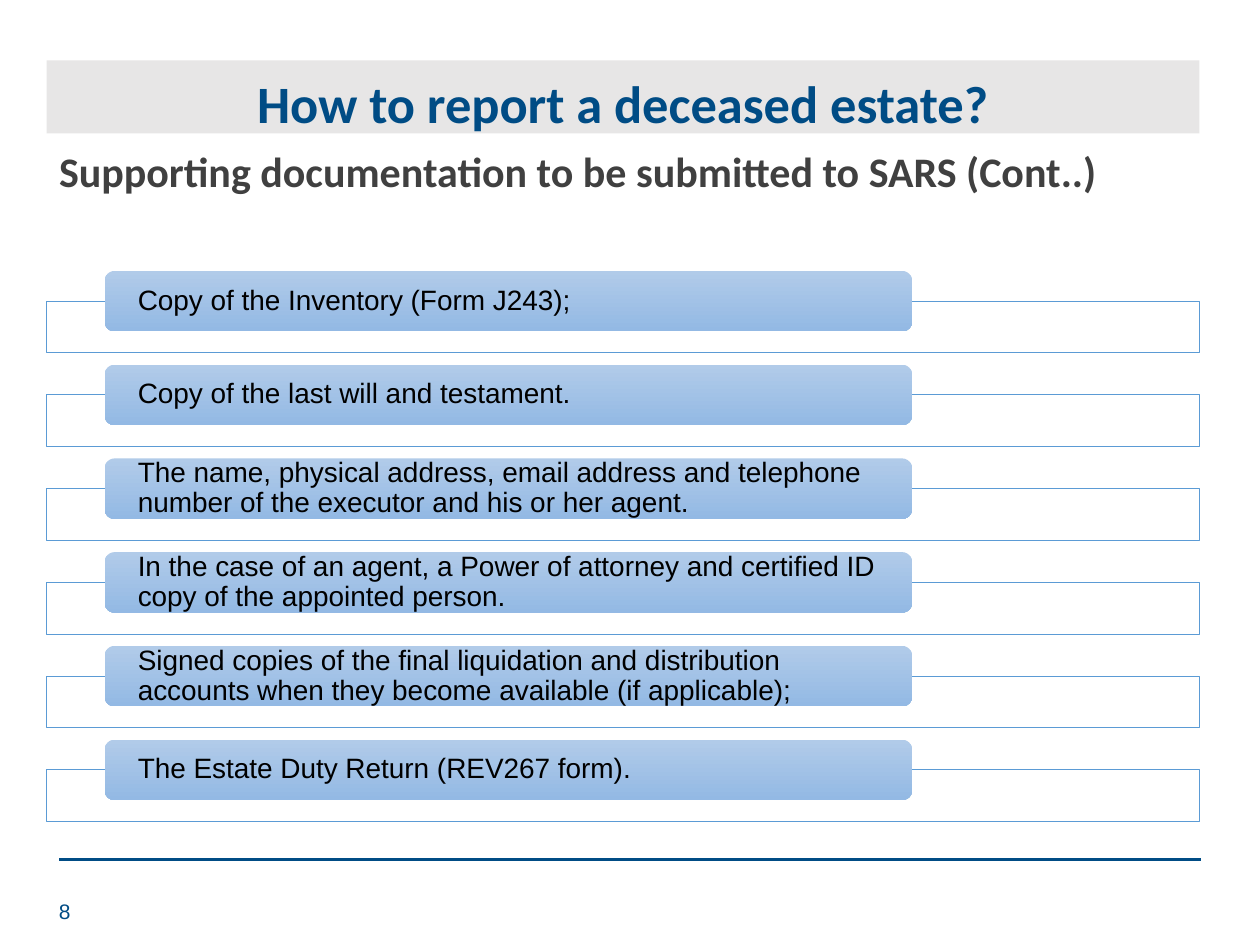
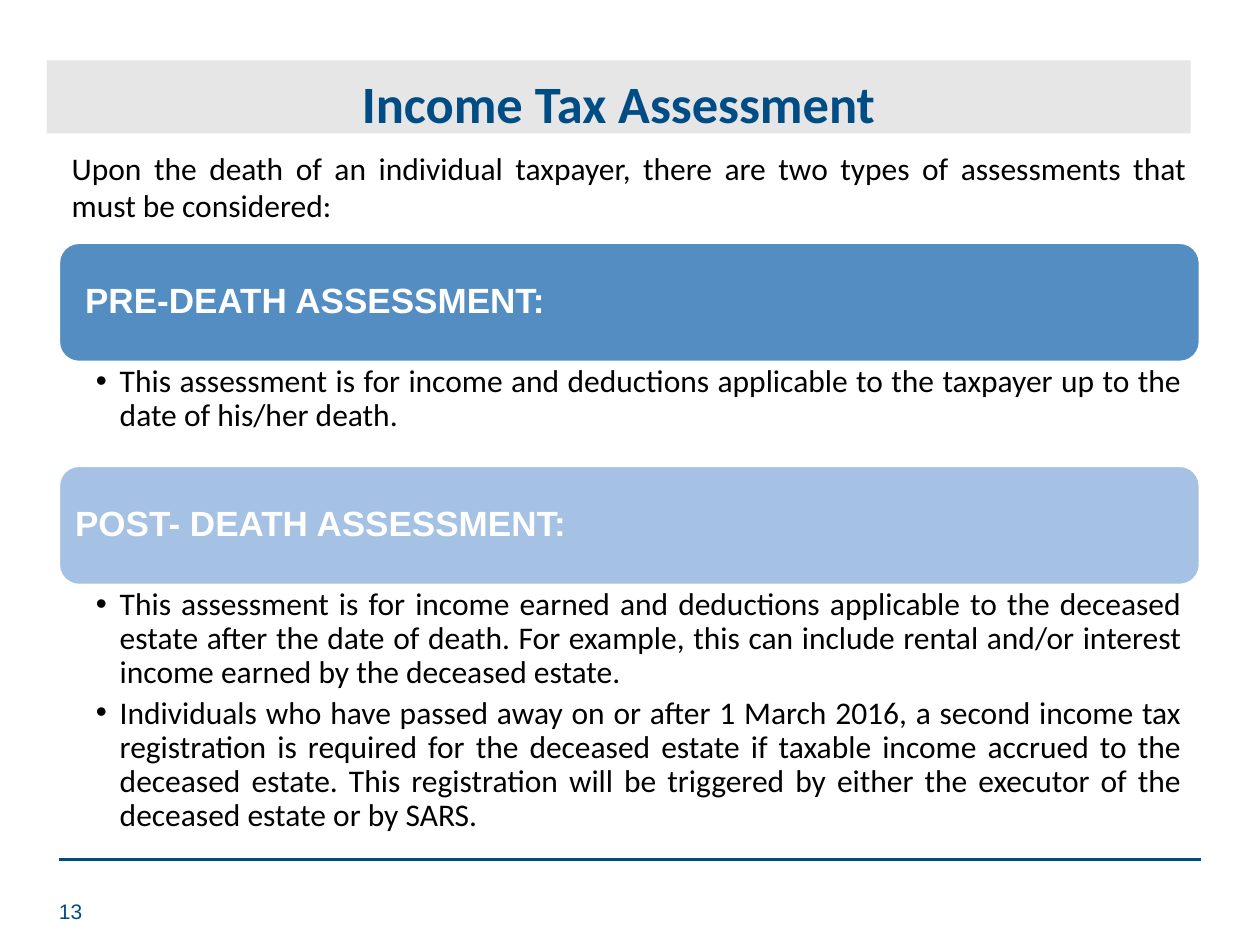
"""Builds two slides on reporting and assessing a deceased estate."""
from lxml import etree
from pptx import Presentation
from pptx.dml.color import RGBColor
from pptx.enum.shapes import MSO_CONNECTOR, MSO_SHAPE
from pptx.enum.text import MSO_ANCHOR, PP_ALIGN
from pptx.oxml.ns import qn
from pptx.util import Inches, Pt

RECTANGLE, ROUNDED = MSO_SHAPE.RECTANGLE, MSO_SHAPE.ROUNDED_RECTANGLE
STRAIGHT = MSO_CONNECTOR.STRAIGHT
TOP, MIDDLE = MSO_ANCHOR.TOP, MSO_ANCHOR.MIDDLE
LEFT, CENTER, JUSTIFY = PP_ALIGN.LEFT, PP_ALIGN.CENTER, PP_ALIGN.JUSTIFY

NAVY = RGBColor(0x00, 0x4C, 0x85)
BAND_GREY = RGBColor(0xE7, 0xE6, 0xE6)
DARK_GREY = RGBColor(0x40, 0x40, 0x40)
BLACK = RGBColor(0x00, 0x00, 0x00)
WHITE = RGBColor(0xFF, 0xFF, 0xFF)
FRAME_BLUE = RGBColor(0x5B, 0x9B, 0xD5)
TAB_TOP = RGBColor(0xB1, 0xCB, 0xE9)
TAB_BOTTOM = RGBColor(0x93, 0xB9, 0xE4)
PRE_BLUE = RGBColor(0x53, 0x8D, 0xC1)
POST_BLUE = RGBColor(0xA5, 0xC1, 0xE3)
HEADING_FONT, BODY_FONT = "Calibri", "Arial"

DOCUMENTS_TITLE = "How to report a deceased estate?"
DOCUMENTS_SUBTITLE = "Supporting documentation to be submitted to SARS (Cont..)"
DOCUMENTS = [
    "Copy of the Inventory (Form J243);",
    "Copy of the last will and testament.",
    "The name, physical address, email address and telephone number of the "
    "executor and his or her agent.",
    "In the case of an agent, a Power of attorney and certified ID copy of "
    "the appointed person.",
    "Signed copies of the final liquidation and distribution accounts when "
    "they become available (if applicable);",
    "The Estate Duty Return (REV267 form).",
]
ASSESSMENT_TITLE = "Income Tax Assessment"
ASSESSMENT_INTRO = ("Upon the death of an individual taxpayer, there are two types of "
                    "assessments that must be considered:")
ASSESSMENTS = [
    {"heading": "PRE-DEATH ASSESSMENT:", "color": PRE_BLUE, "indent": 0.16, "height": 0.83,
     "points": [
         "This assessment is for income and deductions applicable to the taxpayer "
         "up to the date of his/her death."]},
    {"heading": "POST- DEATH ASSESSMENT:", "color": POST_BLUE, "indent": 0.08, "height": 2.08,
     "points": [
         "This assessment is for income earned and deductions applicable to the "
         "deceased estate after the date of death. For example, this can include "
         "rental and/or interest income earned by the deceased estate.",
         "Individuals who have passed away on or after 1 March 2016, a second income "
         "tax registration is required for the deceased estate if taxable income "
         "accrued to the deceased estate. This registration will be triggered by "
         "either the executor of the deceased estate or by SARS."]},
]

BAND_LEFT, BAND_WIDTH = 0.37, 9.15
FIRST_TAB, TAB_PITCH, TAB_HEIGHT = 2.15, 0.744, 0.48
PANEL_DROP, PANEL_HEIGHT = 0.24, 0.41
BLOCK_LEFT, BLOCK_WIDTH = 0.47, 9.05
FIRST_HEADING, HEADING_HEIGHT = 1.93, 0.94


def add_bullet(para):
    """Gives a paragraph a hanging round bullet."""
    properties = para._p.get_or_add_pPr()
    properties.set("marL", str(Inches(0.19)))
    properties.set("indent", str(-Inches(0.19)))
    etree.SubElement(properties, qn("a:buFont"), typeface="Arial")
    etree.SubElement(properties, qn("a:buChar"), char="•")


def write(box, *texts, size, color=BLACK, font=BODY_FONT, bold=False, align=LEFT,
          anchor=TOP, insets=(0.1, 0.05, 0.1, 0.05), spacing=None, after=0, bullet=False):
    """Writes one paragraph per text into a box."""
    frame = box.text_frame
    frame.word_wrap = True
    frame.vertical_anchor = anchor
    (frame.margin_left, frame.margin_top,
     frame.margin_right, frame.margin_bottom) = map(Inches, insets)
    for index, text in enumerate(texts):
        para = frame.add_paragraph() if index else frame.paragraphs[0]
        para.alignment = align
        para.space_after = Pt(after)
        if spacing:
            para.line_spacing = spacing
        if bullet:
            add_bullet(para)
        span = para.add_run()
        span.text = text
        span.font.size = Pt(size)
        span.font.name = font
        span.font.bold = bold
        span.font.color.rgb = color


def add_text(page, area, *texts, **style):
    """Adds a text box."""
    write(page.shapes.add_textbox(*map(Inches, area)), *texts, **style)


def add_box(page, kind, area, fill, line=None, weight=1):
    """Adds a filled shape; a pair of colours makes a downward gradient."""
    box = page.shapes.add_shape(kind, *map(Inches, area))
    box.shadow.inherit = False
    if isinstance(fill, list):
        box.fill.gradient()
        box.fill.gradient_angle = 270
        for stop, color in zip(box.fill.gradient_stops, fill):
            stop.color.rgb = color
    else:
        box.fill.solid()
        box.fill.fore_color.rgb = fill
    if line is None:
        box.line.fill.background()
    else:
        box.line.color.rgb = line
        box.line.width = Pt(weight)
    return box


def add_page(deck, title, number, band_width=BAND_WIDTH):
    """Adds a page with the title band, footer rule and page number."""
    page = deck.slides.add_slide(deck.slide_layouts[6])
    ends = map(Inches, (0.47, 6.82, 9.53, 6.82))
    rule = page.shapes.add_connector(STRAIGHT, *ends)
    rule.line.color.rgb = NAVY
    rule.line.width = Pt(2)
    etree.SubElement(rule._element.spPr, qn("a:effectLst"))
    band = add_box(page, RECTANGLE, (BAND_LEFT, 0.48, band_width, 0.58), BAND_GREY)
    write(band, title, size=30, color=NAVY, font=HEADING_FONT, bold=True,
          align=CENTER, spacing=1.07)
    add_text(page, (BAND_LEFT, 7.03, 0.46, 0.4), str(number), size=12, color=NAVY,
             anchor=MIDDLE)
    return page


def build_documents(deck):
    """Builds the list of supporting documents."""
    page = add_page(deck, DOCUMENTS_TITLE, 8)
    for index, document in enumerate(DOCUMENTS):
        top = FIRST_TAB + index * TAB_PITCH
        add_box(page, RECTANGLE, (BAND_LEFT, top + PANEL_DROP, BAND_WIDTH, PANEL_HEIGHT),
                WHITE, FRAME_BLUE, 0.5)
        tab = add_box(page, ROUNDED, (0.83, top, 6.41, TAB_HEIGHT), [TAB_TOP, TAB_BOTTOM])
        write(tab, document, size=16, anchor=MIDDLE, insets=(0.24, 0, 0.24, 0), spacing=0.9)
    add_text(page, (BAND_LEFT, 1.15, 8.62, 0.48), DOCUMENTS_SUBTITLE, size=24,
             color=DARK_GREY, font=HEADING_FONT, bold=True, spacing=0.9)


def build_assessments(deck):
    """Builds the two assessment blocks."""
    page = add_page(deck, ASSESSMENT_TITLE, 13, band_width=9.08)
    intro = add_box(page, RECTANGLE, (BLOCK_LEFT, 1.13, BLOCK_WIDTH, 0.72), WHITE)
    write(intro, ASSESSMENT_INTRO, size=18, font=HEADING_FONT, align=JUSTIFY)
    top = FIRST_HEADING
    for block in ASSESSMENTS:
        heading = add_box(page, ROUNDED, (BLOCK_LEFT, top, BLOCK_WIDTH, HEADING_HEIGHT),
                          block["color"], WHITE)
        write(heading, block["heading"], size=20, color=WHITE, bold=True, anchor=MIDDLE,
              insets=(block["indent"], 0.08, 0.08, 0.08), spacing=0.9)
        top += HEADING_HEIGHT
        add_text(page, (BLOCK_LEFT, top, BLOCK_WIDTH, block["height"]), *block["points"],
                 size=18, font=HEADING_FONT, align=JUSTIFY, insets=(0.29, 0.03, 0.14, 0.03),
                 spacing=0.9, after=3.6, bullet=True)
        top += block["height"]


def main():
    """Builds and saves the deck."""
    deck = Presentation()
    deck.slide_width, deck.slide_height = Inches(10), Inches(7.5)
    build_documents(deck)
    build_assessments(deck)
    deck.save("out.pptx")


if __name__ == "__main__":
    main()
